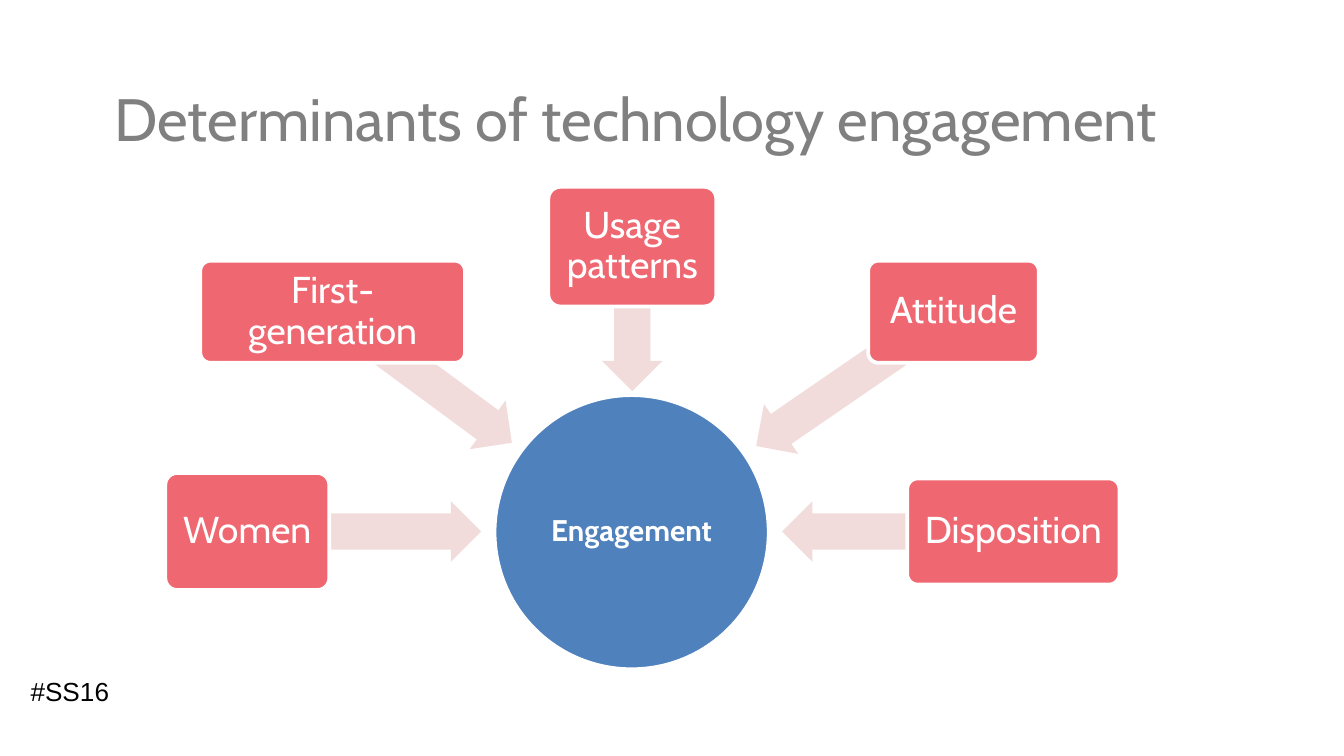
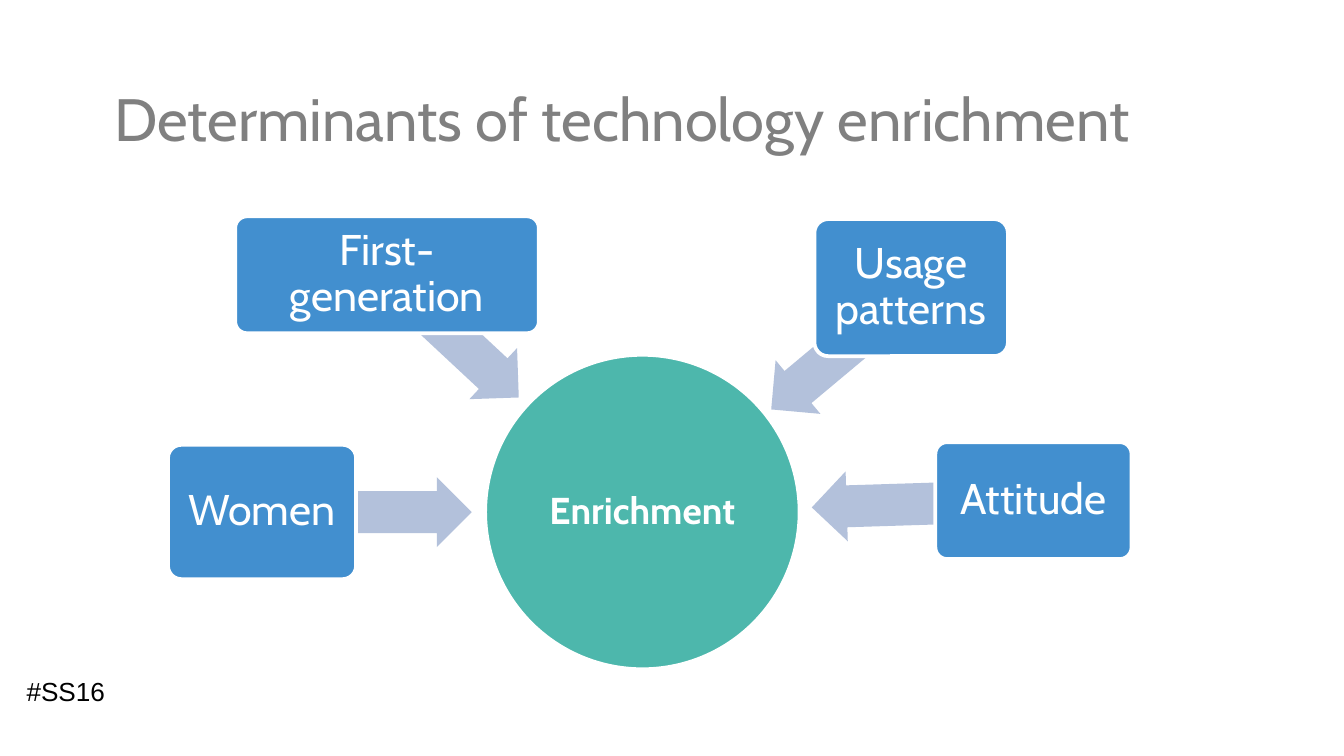
"""Builds two radial diagrams of what drives technology engagement and enrichment."""
from pptx import Presentation
from pptx.dml.color import RGBColor
from pptx.enum.shapes import MSO_SHAPE
from pptx.enum.text import MSO_ANCHOR, PP_ALIGN
from pptx.util import Inches, Pt

FONT = "Cabin"
WHITE, GREY, BLACK = "FFFFFF", "808080", "000000"
TITLE_AREA = (0.75, 0.56, 8.08, 0.6)

DIAGRAMS = [
    {
        "title": "Determinants of technology engagement",
        "hub": ("Engagement", (3.68, 2.94, 2.04, 2.04), 16),
        "hub_color": "4F81BD", "card_color": "EF6770", "arrow_color": "F2DCDB",
        "card_size": 20, "card_inset": 0.07, "tag_left": 0.02,
        "factors": [
            ("Women", (1.23, 3.52, 1.22, 0.87), (1.84, 3.73, 1.74, 0.45), 180),
            ("First-generation", (1.49, 1.94, 1.97, 0.76), (2.32, 2.58, 1.65, 0.45), 216.4),
            ("Usage patterns", (4.08, 1.39, 1.25, 0.89), (4.18, 2.16, 1.05, 0.45), 270),
            ("Attitude", (6.46, 1.94, 1.27, 0.76), (5.47, 2.59, 1.78, 0.45), 325.5),
            ("Disposition", (6.75, 3.56, 1.58, 0.79), (5.82, 3.73, 1.72, 0.45), 0),
        ],
    },
    {
        "title": "Determinants of technology enrichment",
        "hub": ("Enrichment", (3.61, 2.64, 2.34, 2.34), 20),
        "hub_color": "4DB7AC", "card_color": "428FCF", "arrow_color": "B3C1DB",
        "card_size": 23, "card_inset": 0.08, "tag_left": -0.01,
        "factors": [
            ("Women", (1.25, 3.31, 1.4, 1), (1.95, 3.55, 1.56, 0.52), 180),
            ("First-generation", (1.75, 1.61, 2.26, 0.87), (2.7, 2.24, 1.34, 0.52), 223),
            ("Usage patterns", (6.06, 1.63, 1.44, 1.02), (5.58, 2.35, 1.36, 0.52), 320.1),
            ("Attitude", (6.96, 3.29, 1.46, 0.87), (6.04, 3.49, 1.65, 0.52), 358.2),
        ],
    },
]


def color(value):
    return RGBColor.from_string(value)


def inches(area):
    return [Inches(length) for length in area]


def write(box, text, size, hue, font=FONT, bold=False, align=PP_ALIGN.CENTER):
    box.text_frame.word_wrap = True
    para = box.text_frame.paragraphs[0]
    para.alignment = align
    span = para.add_run()
    span.text = text
    span.font.name, span.font.size, span.font.bold = font, Pt(size), bold
    span.font.color.rgb = color(hue)
    return para


def add_text(page, area, *args, **options):
    write(page.shapes.add_textbox(*inches(area)), *args, **options)


def add_figure(group, kind, area, fill, adjustments=(), outline=None):
    figure = group.shapes.add_shape(kind, *inches(area))
    figure.shadow.inherit = False
    figure.fill.solid()
    figure.fill.fore_color.rgb = color(fill)
    for index, value in enumerate(adjustments):
        figure.adjustments[index] = value
    if outline:
        figure.line.color.rgb = color(outline)
        figure.line.width = Pt(2)
    else:
        figure.line.fill.background()
    return figure


def label(figure, text, size, inset, bold=False):
    frame = figure.text_frame
    frame.vertical_anchor = MSO_ANCHOR.MIDDLE
    frame.margin_left = frame.margin_right = Inches(inset)
    frame.margin_top = frame.margin_bottom = Inches(inset)
    write(figure, text, size, WHITE, bold=bold).line_spacing = 0.9


def add_diagram(page, diagram):
    group = page.shapes.add_group_shape()
    text, area, size = diagram["hub"]
    hub = add_figure(group, MSO_SHAPE.OVAL, area, diagram["hub_color"], outline=WHITE)
    label(hub, text, size, 0.01, bold=True)
    for text, card_area, arrow_area, rotation in diagram["factors"]:
        arrow = add_figure(group, MSO_SHAPE.LEFT_ARROW, arrow_area,
                           diagram["arrow_color"], (0.6, 0.5))
        arrow.rotation = rotation
        card = add_figure(group, MSO_SHAPE.ROUNDED_RECTANGLE, card_area,
                          diagram["card_color"], (0.1,), WHITE)
        label(card, text, diagram["card_size"], diagram["card_inset"])


def main():
    deck = Presentation()
    deck.slide_width = Inches(10)
    deck.slide_height = deck.slide_width * 9 // 16
    for diagram in DIAGRAMS:
        page = deck.slides.add_slide(deck.slide_layouts[6])
        add_text(page, TITLE_AREA, diagram["title"], 32, GREY, align=PP_ALIGN.LEFT)
        add_diagram(page, diagram)
        add_text(page, (diagram["tag_left"], 4.98, 1, 0.34), "#SS16", 14, BLACK, "Arial")
    deck.save("out.pptx")


if __name__ == "__main__":
    main()
